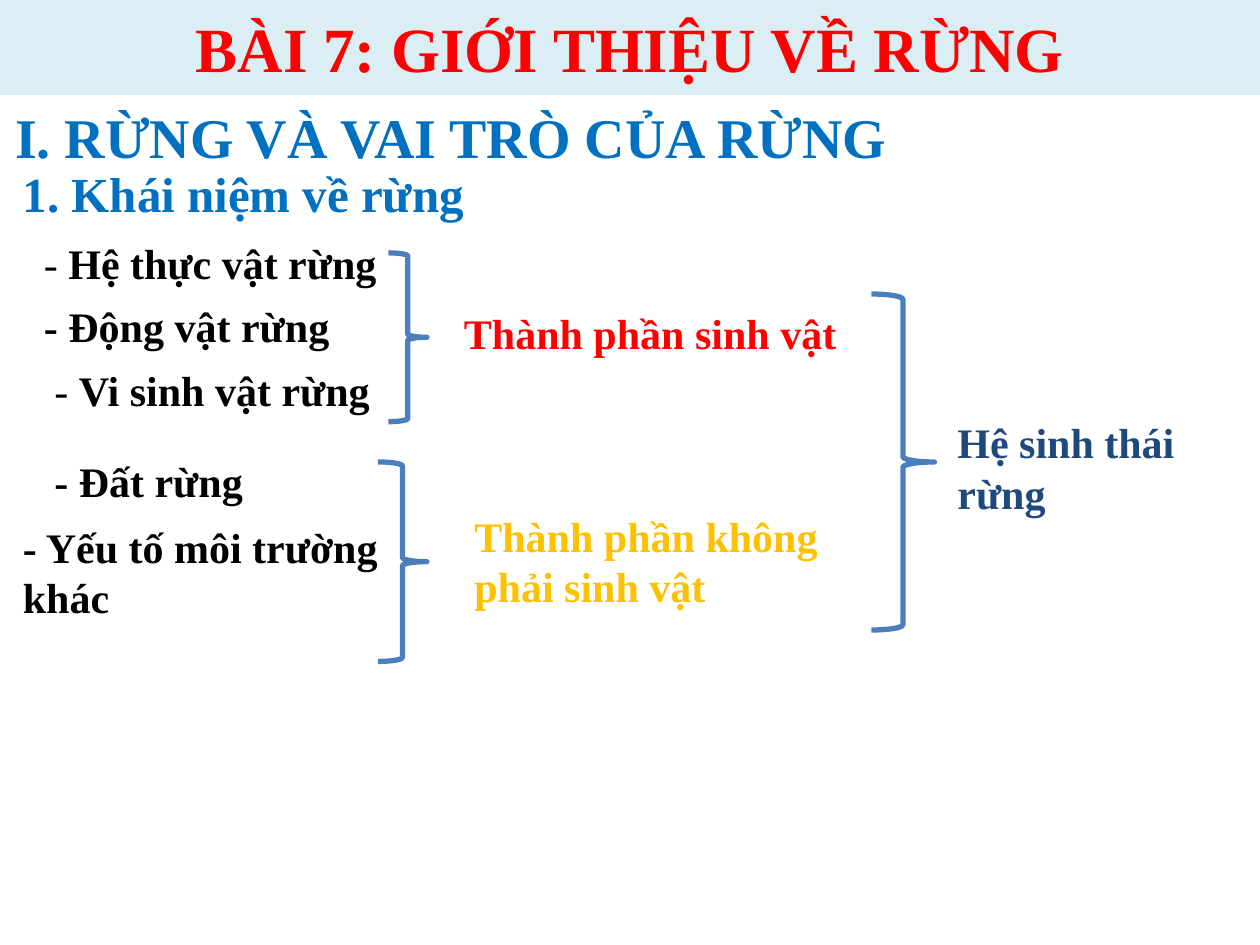
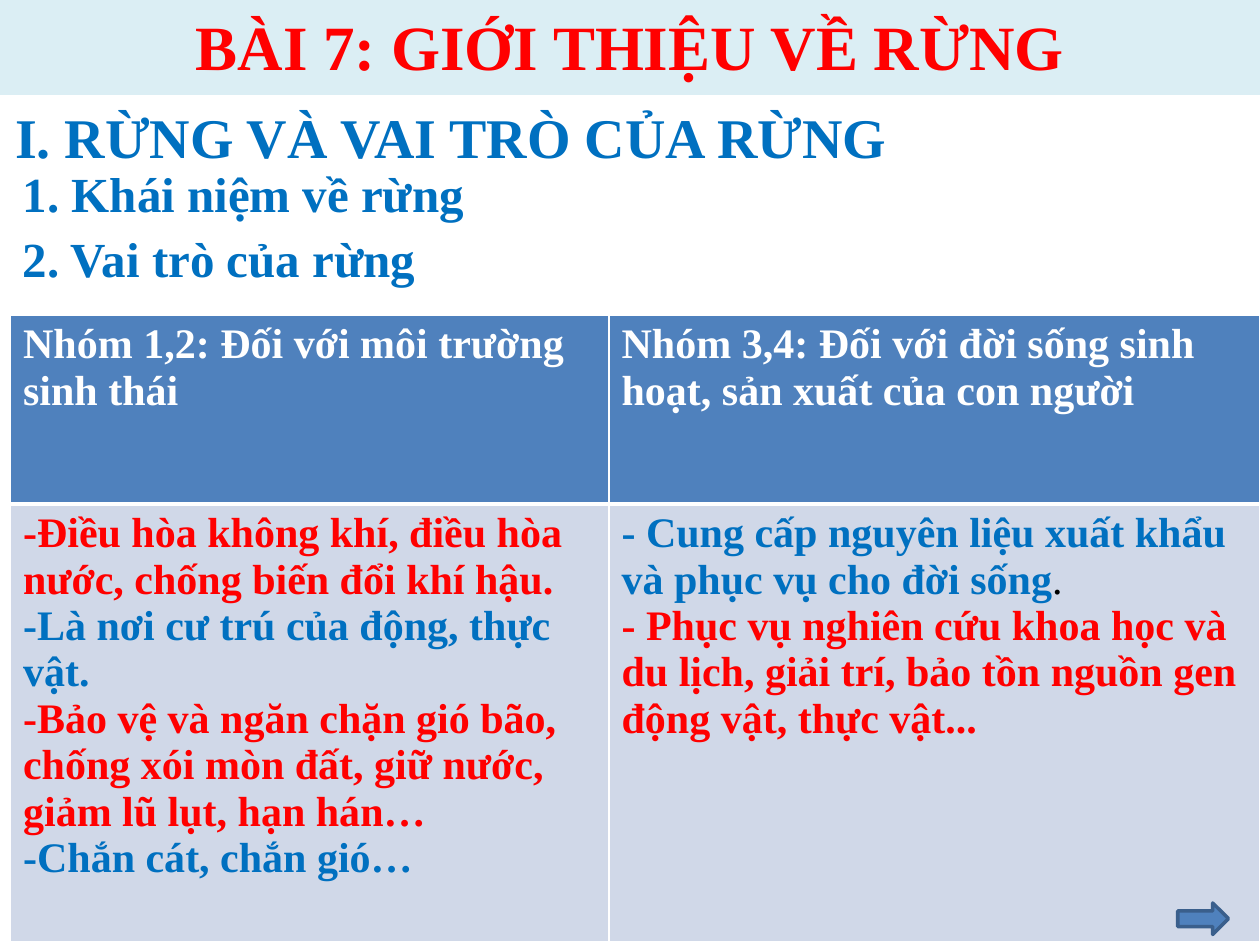
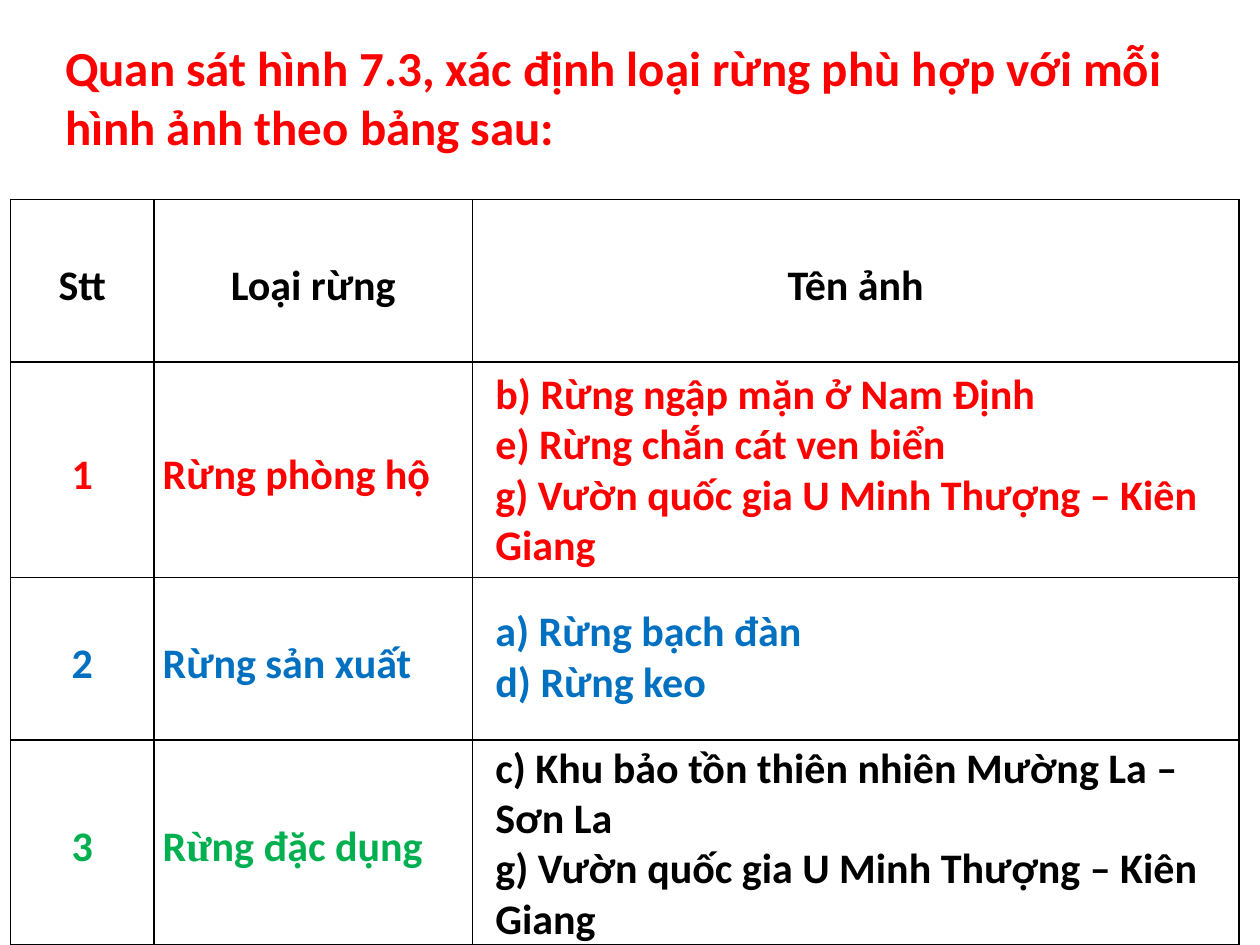
from lxml import etree
from pptx import Presentation
from pptx.dml.color import RGBColor as Rgb
from pptx.enum.shapes import MSO_SHAPE as Shape
from pptx.enum.text import MSO_ANCHOR as Anchor, MSO_AUTO_SIZE as AutoSize, PP_ALIGN as Align
from pptx.oxml.ns import qn
from pptx.util import Pt

COLORS = {
    "red": "FF0000", "blue": "0070C0", "black": "000000", "white": "FFFFFF",
    "gold": "FFC000", "navy": "1F497D", "green": "00B050", "band": "DBEEF4",
    "brace": "4B7EBC", "header": "4F81BD", "body": "D0D8E8", "arrow": "3A5F8C",
}
RGB = {name: Rgb.from_string(value) for name, value in COLORS.items()}
SERIF, SANS = "Times New Roman", "Calibri"


def write(frame, lines, size, font):
    for index, (color, *pieces) in enumerate(lines):
        para = frame.paragraphs[0] if index == 0 else frame.add_paragraph()
        para.text = pieces[0]
        for piece in pieces[1:]:
            para.add_run().text = piece
        for span in para.runs:
            span.font.name = font
            span.font.size = Pt(size)
            span.font.bold = True
            span.font.color.rgb = RGB[color]


def set_borders(cell, color, **widths):
    properties = cell._tc.get_or_add_tcPr()
    for index, side in enumerate("LRTB"):
        width = Pt(widths.get(side, 1))
        line = etree.Element(qn(f"a:ln{side}"), w=str(int(width)))
        fill = etree.SubElement(line, qn("a:solidFill"))
        etree.SubElement(fill, qn("a:srgbClr"), val=COLORS[color])
        properties.insert(index, line)


deck = Presentation()
deck.slide_width, deck.slide_height = Pt(720), Pt(540)
pages = [deck.slides.add_slide(deck.slide_layouts[5]) for _ in range(3)]
concept_page, role_page, types_page = pages

for page, top in ((concept_page, 0), (role_page, -2)):
    band = page.shapes.title
    band.left, band.top, band.width, band.height = Pt(0), Pt(top), Pt(720), Pt(54 - top)
    band.fill.solid()
    band.fill.fore_color.rgb = RGB["band"]
    band.line.color.rgb = RGB["band"]
    band.line.width = Pt(0.75)
    band.text_frame.auto_size = AutoSize.NONE
    band.text_frame.vertical_anchor = Anchor.MIDDLE
    write(band.text_frame, [("red", "BÀI 7: GIỚI THIỆU VỀ RỪNG")], 36, SERIF)
    band.text_frame.paragraphs[0].alignment = Align.CENTER

question = types_page.shapes.title
question.left, question.top, question.width, question.height = Pt(30), Pt(18), Pt(666), Pt(75)
question.text_frame.auto_size = AutoSize.NONE
question.text_frame.vertical_anchor = Anchor.TOP
write(question.text_frame, [
    ("red", "Quan sát hình 7.3, xác định loại rừng phù hợp với mỗi hình ảnh theo bảng sau:"),
], 28, SANS)
question.text_frame.paragraphs[0].alignment = Align.LEFT

role_table = role_page.shapes.add_table(2, 2, Pt(6), Pt(180), Pt(714), Pt(358)).table
for column, width in zip(role_table.columns, (342, 372)):
    column.width = Pt(width)
for row, height in zip(role_table.rows, (108, 250)):
    row.height = Pt(height)
role_cells = [
    [("white", "Nhóm 1,2: Đối với môi trường sinh thái")],
    [("white", "Nhóm 3,4: Đối với đời sống sinh hoạt, sản xuất của con người")],
    [
        ("red", "-Điều hòa không khí, điều hòa nước, chống biến đổi khí hậu."),
        ("blue", "-Là nơi cư trú của động, thực vật."),
        ("red", "-Bảo vệ và ngăn chặn gió bão, chống xói mòn đất, giữ nước, giảm lũ lụt, hạn hán…"),
        ("blue", "-Chắn cát, chắn gió…"),
    ],
    [
        ("blue", "- Cung cấp nguyên liệu xuất khẩu và phục vụ cho đời sống", "."),
        ("red", "- Phục vụ nghiên cứu khoa học và du lịch, giải trí, bảo tồn nguồn gen động vật, thực vật..."),
    ],
]
for index, (cell, lines) in enumerate(zip(role_table.iter_cells(), role_cells)):
    is_header = index < 2
    write(cell.text_frame, lines, 24, SERIF)
    cell.fill.solid()
    cell.fill.fore_color.rgb = RGB["header" if is_header else "body"]
    set_borders(cell, "white", **({"B": 3} if is_header else {"T": 3}))
period = role_table.cell(1, 1).text_frame.paragraphs[0].runs[1]
period.font.bold = False
period.font.color.rgb = RGB["black"]

types_table = types_page.shapes.add_table(4, 3, Pt(6), Pt(114), Pt(702), Pt(426)).table
for column, width in zip(types_table.columns, (82, 182, 438)):
    column.width = Pt(width)
for row, height in zip(types_table.rows, (93, 123, 93, 117)):
    row.height = Pt(height)
type_rows = [
    ("black", ["Stt"], ["Loại rừng"], ["Tên ảnh"]),
    ("red", ["1"], ["Rừng phòng hộ"], []),
    ("blue", ["2"], ["Rừng sản xuất"], []),
    ("green", ["3"], ["R", "ừ", "ng đặc dụng"], []),
]
for row_index, (color, *texts) in enumerate(type_rows):
    for column_index, pieces in enumerate(texts):
        cell = types_table.cell(row_index, column_index)
        cell.fill.background()
        set_borders(cell, "black")
        cell.vertical_anchor = Anchor.MIDDLE
        cell.margin_left = cell.margin_right = Pt(5)
        cell.margin_top = cell.margin_bottom = 0
        if pieces:
            write(cell.text_frame, [(color, *pieces)], 24, SANS)
            para = cell.text_frame.paragraphs[0]
            para.line_spacing = 1.2
            is_centered = row_index == 0 or column_index == 0
            para.alignment = Align.CENTER if is_centered else Align.LEFT
types_table.cell(3, 1).text_frame.paragraphs[0].runs[1].font.name = SERIF

section = ("blue", "I. RỪNG VÀ VAI TRÒ CỦA RỪNG")
concept = ("blue", "1. Khái niệm về rừng")
texts = [
    (concept_page, 1.5, 55, 672, 46, 32, SERIF, [section]),
    (concept_page, 6, 90, 366, 41, 28, SERIF, [concept]),
    (concept_page, 18, 132, 225, 36, 24, SERIF, [("black", "- ", "Hệ thực vật rừng")]),
    (concept_page, 18, 168, 198, 36, 24, SERIF, [("black", "- Động vật rừng")]),
    (concept_page, 24, 204.5, 207, 36, 24, SERIF, [("black", "- ", "Vi sinh vật rừng")]),
    (concept_page, 24, 257, 180, 36, 24, SERIF, [("black", "- Đất rừng")]),
    (concept_page, 6, 294.5, 252, 65.5, 24, SERIF, [("black", "- Yếu tố môi trường khác")]),
    (concept_page, 258, 172, 240, 36, 24, SERIF, [("red", "Thành phần sinh vật")]),
    (concept_page, 264, 288, 234, 65.5, 24, SERIF, [("gold", "Thành phần không phải sinh vật")]),
    (concept_page, 540, 234.5, 171, 65.5, 24, SERIF, [("navy", "Hệ sinh thái rừng")]),
    (role_page, 1.5, 55, 672, 46, 32, SERIF, [section]),
    (role_page, 6, 90, 366, 41, 28, SERIF, [concept]),
    (role_page, 6, 127, 366, 41, 28, SERIF, [("blue", "2. Vai trò của rừng")]),
    (types_page, 276, 206.5, 450, 124, 24, SANS, [
        ("red", "b) Rừng ngập mặn ở Nam Định"),
        ("red", "e) Rừng chắn cát ven biển"),
        ("red", "g) Vườn quốc gia U Minh Thượng – Kiên Giang"),
    ]),
    (types_page, 276, 342, 378, 65.5, 24, SANS, [
        ("blue", "a) Rừng bạch đàn"),
        ("blue", "d) Rừng keo"),
    ]),
    (types_page, 276, 420, 426, 124, 24, SANS, [
        ("black", "c) Khu bảo tồn thiên nhiên Mường La – Sơn La"),
        ("black", "g) Vườn quốc gia U Minh Thượng – Kiên Giang"),
    ]),
]
for page, left, top, width, height, size, font, lines in texts:
    box = page.shapes.add_textbox(Pt(left), Pt(top), Pt(width), Pt(height))
    box.text_frame.word_wrap = True
    box.text_frame.auto_size = AutoSize.SHAPE_TO_FIT_TEXT
    write(box.text_frame, lines, size, font)
    if len(lines[0]) > 2:
        box.text_frame.paragraphs[0].runs[0].font.bold = False

for left, top, width, height in ((222, 144.5, 22, 96.5), (216, 264, 28, 114), (498, 168, 36, 192)):
    brace = concept_page.shapes.add_shape(Shape.RIGHT_BRACE, Pt(left), Pt(top), Pt(width), Pt(height))
    brace.shadow.inherit = False
    brace.fill.background()
    brace.line.color.rgb = RGB["brace"]
    brace.line.width = Pt(3)

arrow = role_page.shapes.add_shape(Shape.RIGHT_ARROW, Pt(673), Pt(516), Pt(29), Pt(18))
arrow.shadow.inherit = False
arrow.fill.solid()
arrow.fill.fore_color.rgb = RGB["header"]
arrow.line.color.rgb = RGB["arrow"]
arrow.line.width = Pt(2)

deck.save("out.pptx")
